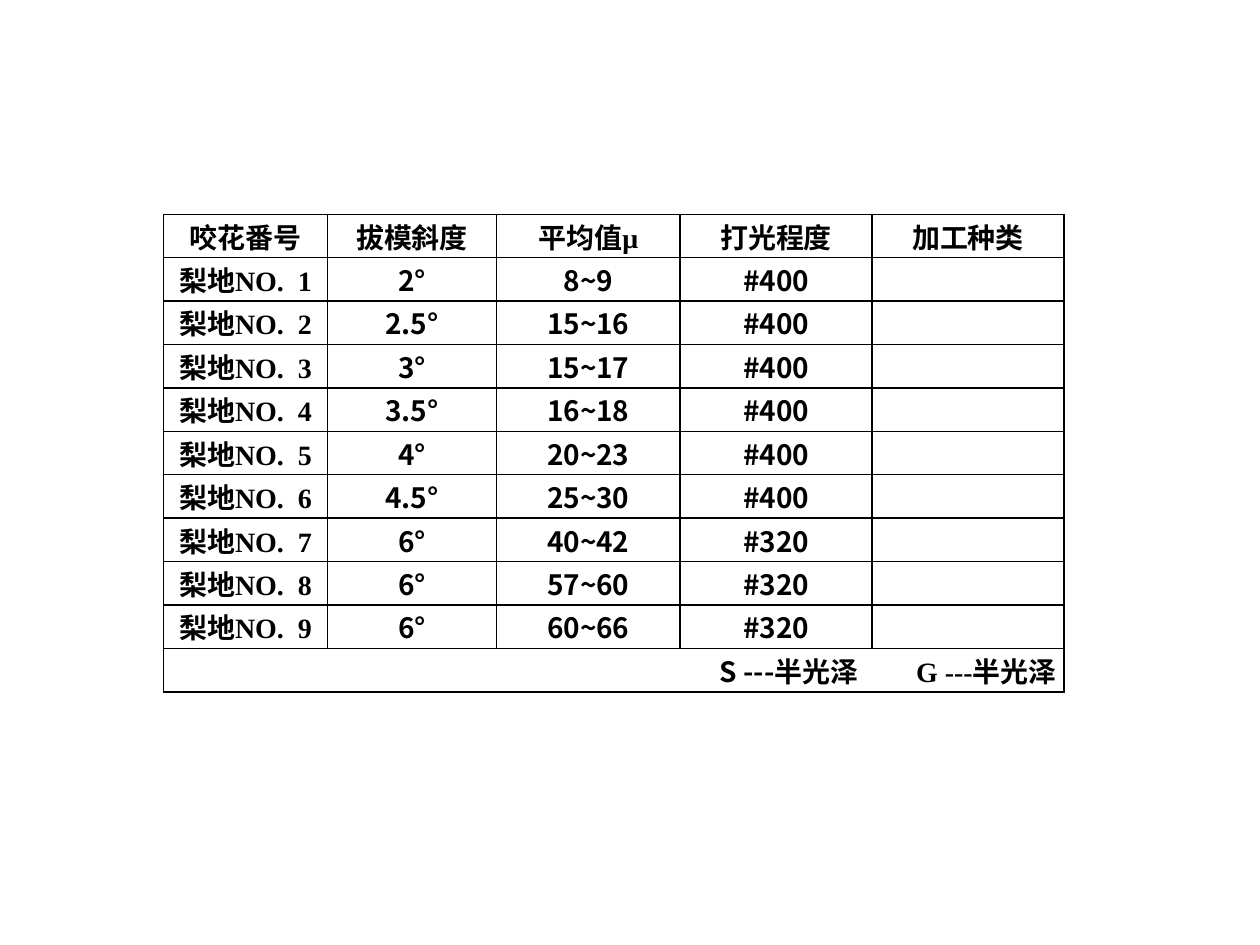
"""Build the slide with the table of pear-skin texture numbers."""
from dataclasses import dataclass

import lxml.etree
import pptx
import pptx.dml.color
import pptx.enum.text
import pptx.oxml.ns
import pptx.util

Cm = pptx.util.Cm
Pt = pptx.util.Pt
qn = pptx.oxml.ns.qn
ALIGN = pptx.enum.text.PP_ALIGN
BLACK = pptx.dml.color.RGBColor(0x00, 0x00, 0x00)
SERIF = "Times New Roman"
SANS = "Noto Sans CJK SC"
FONT_FORMAT = {"size": Pt(16), "bold": True}
CELL_FORMAT = {
    "margin_left": 0,
    "margin_right": 0,
    "margin_top": 0,
    "margin_bottom": 0,
    "vertical_anchor": pptx.enum.text.MSO_ANCHOR.MIDDLE,
}
COL_WIDTHS = (Cm(3.3), Cm(3.41), Cm(3.7), Cm(3.87), Cm(3.87))
HEADERS = ("咬花番号", "拔模斜度", "平均值μ", "打光程度", "加工种类")
LEGEND_TABS = (Cm(14), Cm(18))


@dataclass
class Texture:
    """One texture with its draft angle, mean depth and polish grade."""

    number: int
    draft: str
    mean: str
    polish: str


TEXTURES = (
    Texture(1, "2°", "8~9", "#400"),
    Texture(2, "2.5°", "15~16", "#400"),
    Texture(3, "3°", "15~17", "#400"),
    Texture(4, "3.5°", "16~18", "#400"),
    Texture(5, "4°", "20~23", "#400"),
    Texture(6, "4.5°", "25~30", "#400"),
    Texture(7, "6°", "40~42", "#320"),
    Texture(8, "6°", "57~60", "#320"),
    Texture(9, "6°", "60~66", "#320"),
)


def add_run(p, text: str, font: str) -> None:
    """Add a bold black run in the given Latin font."""
    r = p.add_run()
    r.text = text
    for name, value in FONT_FORMAT.items():
        setattr(r.font, name, value)
    r.font.color.rgb = BLACK
    r.font.name = font
    ea = lxml.etree.SubElement(r.font._element, qn("a:ea"))
    ea.set("typeface", SANS)


def format_cell(cell) -> None:
    """Give a cell thin black borders, no fill and no margins."""
    tc_pr = cell._tc.get_or_add_tcPr()
    for side in ("a:lnL", "a:lnR", "a:lnT", "a:lnB"):
        ln = lxml.etree.SubElement(tc_pr, qn(side), w=str(Pt(1)))
        fill = lxml.etree.SubElement(ln, qn("a:solidFill"))
        lxml.etree.SubElement(fill, qn("a:srgbClr"), val=str(BLACK))
    cell.fill.background()
    for name, value in CELL_FORMAT.items():
        setattr(cell, name, value)


def fill_cell(cell, text: str, font: str) -> None:
    """Write centred text into a cell."""
    p = cell.text_frame.paragraphs[0]
    p.alignment = ALIGN.CENTER
    add_run(p, text, font)


def fill_legend(cell) -> None:
    """Write the two gloss labels, each ending at a right tab."""
    p = cell.text_frame.paragraphs[0]
    p.alignment = ALIGN.LEFT
    tabs = lxml.etree.SubElement(p._p.get_or_add_pPr(), qn("a:tabLst"))
    for pos in LEGEND_TABS:
        lxml.etree.SubElement(tabs, qn("a:tab"), pos=str(pos), algn="r")
    add_run(p, "\tS ---", SANS)
    add_run(p, "半光泽\tG ---半光泽", SERIF)


def add_texture_table(s) -> None:
    """Draw the header, the textures and the legend row."""
    rows = len(TEXTURES) + 2
    table = s.shapes.add_table(
        rows, len(HEADERS), Cm(3.3), Cm(4.32), sum(COL_WIDTHS), Cm(9.63)
    ).table
    table.first_row = table.horz_banding = False
    for col, width in zip(table.columns, COL_WIDTHS):
        col.width = width
    for cell in table.iter_cells():
        format_cell(cell)
    for i, header in enumerate(HEADERS):
        fill_cell(table.cell(0, i), header, SERIF)
    for row, t in enumerate(TEXTURES, 1):
        fill_cell(table.cell(row, 0), f"梨地NO.  {t.number}", SERIF)
        for col, text in enumerate((t.draft, t.mean, t.polish), 1):
            fill_cell(table.cell(row, col), text, SANS)
    legend = table.cell(rows - 1, 0)
    legend.merge(table.cell(rows - 1, len(HEADERS) - 1))
    fill_legend(legend)


def main() -> None:
    """Create and save the presentation."""
    prs = pptx.Presentation()
    prs.slide_width, prs.slide_height = Cm(25.4), Cm(19.05)
    s = prs.slides.add_slide(prs.slide_layouts[6])
    add_texture_table(s)
    prs.save("out.pptx")


if __name__ == "__main__":
    main()
